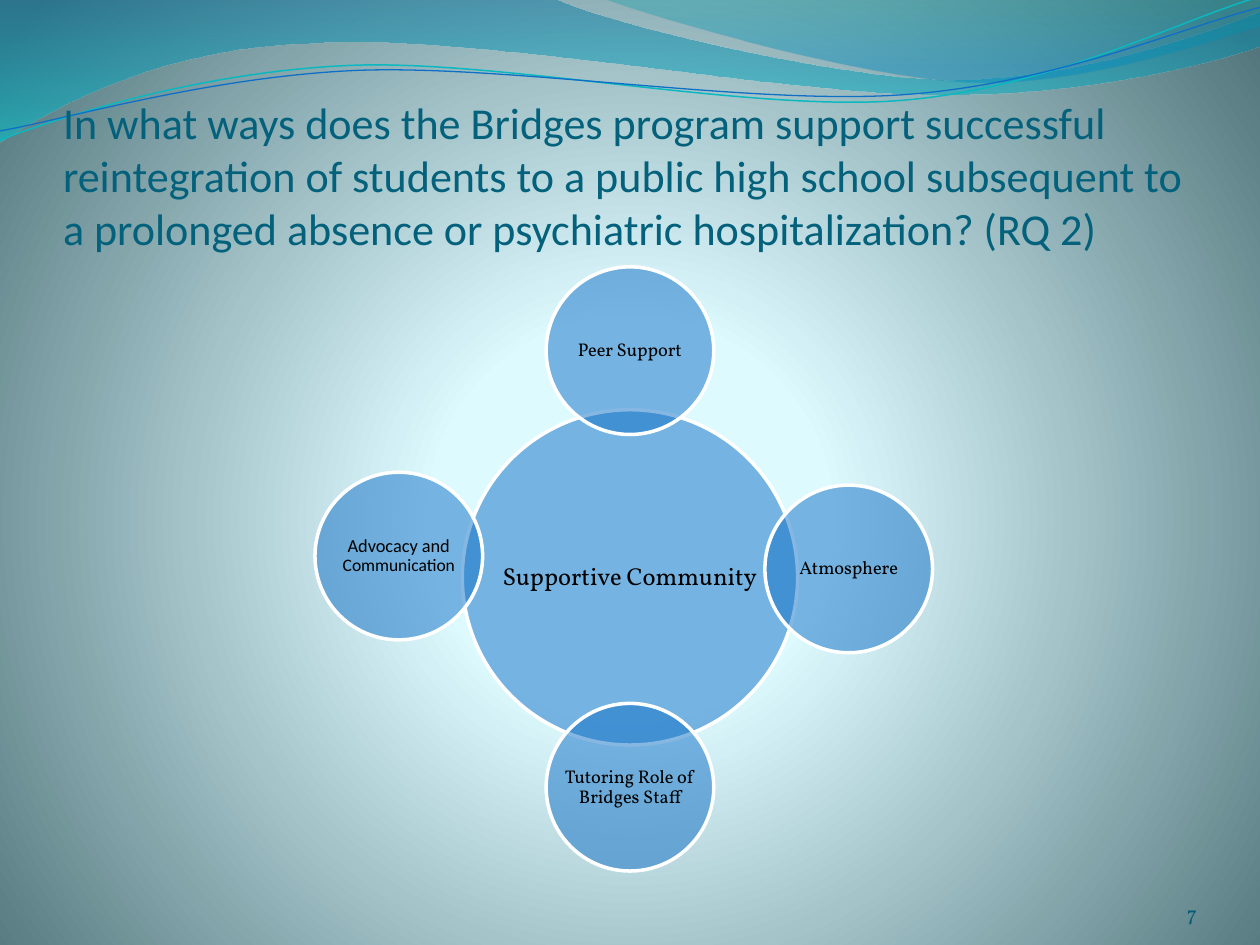
from lxml.etree import Element, SubElement
from pptx import Presentation
from pptx.dml.color import RGBColor
from pptx.enum.shapes import MSO_SHAPE
from pptx.enum.text import MSO_ANCHOR, PP_ALIGN
from pptx.oxml.ns import qn
from pptx.util import Cm, Pt

BLUE = RGBColor(0x0F, 0x6F, 0xC6)
TEAL = RGBColor(0x0A, 0xB8, 0xBF)
TITLE = RGBColor(0x04, 0x61, 0x7B)
NUMBER = RGBColor(0x04, 0x5D, 0x75)
WHITE = RGBColor(0xFF, 0xFF, 0xFF)
BLACK = RGBColor(0, 0, 0)
BG_STOPS = [(0, RGBColor(0xDE, 0xFB, 0xFF), 100),
            (25, RGBColor(0xDD, 0xFA, 0xFF), 100),
            (100, RGBColor(0x52, 0x76, 0x7C), 100)]
WIDE_STOPS = [(0, RGBColor(0x00, 0x74, 0xA1), 45),
              (100, RGBColor(0x00, 0xC6, 0xCF), 55)]
CORNER_STOPS = [(0, RGBColor(0x00, 0xA1, 0xA9), 30),
                (80, RGBColor(0x00, 0x8B, 0xBF), 45)]

# Outlines in cm: a pair is a straight step, six numbers are a Bezier step
WIDE_WAVE = [(0, 0), (11.18, -0.03), (12.09, 0.43, 16.87, 1.6, 19.25, 1.6),
             (21.67, 1.6, 24.33, 0.66, 25.4, 0.23), (25.43, 0.91),
             (24.97, 1.12, 22.1, 1.93, 18.95, 1.91),
             (15.8, 1.91, 9.7, 0.71, 6.53, 0.86),
             (3.28, 0.91, 1.17, 2.11, -0.03, 2.87), (0, 0)]
CORNER_WAVE = [(12.17, -0.03), (12.93, 0.28, 17.32, 1.57, 19.53, 1.65),
               (21.74, 1.75, 24.41, 0.81, 25.4, 0.53), (25.4, 0),
               (12.17, -0.03)]
TEAL_CURVE = [(0, 2.82), (1.22, 2.36, 4.01, 1.45, 7.04, 1.32),
              (10.03, 1.19, 15.06, 2.26, 18.11, 2.03),
              (21.16, 1.8, 23.83, 0.38, 25.35, -0.05)]
BLUE_CURVE = [(0, 2.64), (1.19, 2.44, 4.17, 1.55, 7.19, 1.42),
              (10.24, 1.3, 15.16, 2.13, 18.21, 1.91),
              (21.23, 1.7, 23.9, 0.53, 25.4, 0.15)]

HUB_SIZE, SATELLITE_SIZE = 6.76, 3.38
SATELLITES = [(12.7, 7.07, ["Peer Support"], {}),
              (17.11, 11.47, ["Atmosphere"], {}),
              (12.7, 15.87, ["Tutoring Role of Bridges Staff"], {}),
              (8.04, 11.21, ["Advocacy and ", "Communication"],
               {"font": "Calibri", "sizes": (10.5, 10)})]


def set_alpha(color, percent):
    SubElement(color, qn("a:alpha"), val=str(percent * 1000))


def set_gradient(fill, parent, stops, radial=False):
    """Give a fill its own colour stops, downward or from the middle."""
    fill.gradient()
    grad = parent.find(qn("a:gradFill"))
    for child in list(grad):
        grad.remove(child)
    gs_lst = SubElement(grad, qn("a:gsLst"))
    for pos, color, alpha in stops:
        gs = SubElement(gs_lst, qn("a:gs"), pos=str(pos * 1000))
        clr = SubElement(gs, qn("a:srgbClr"), val=str(color))
        if alpha < 100:
            set_alpha(clr, alpha)
    if radial:
        way = SubElement(grad, qn("a:path"), path="circle")
        SubElement(way, qn("a:fillToRect"), l="10000", t="110000",
                   r="10000", b="100000")
    else:
        SubElement(grad, qn("a:lin"), ang="5400000", scaled="0")


def add_outline(s, steps, close):
    """Build a freeform through the step ends, then bend its Bezier steps."""
    ends = [(Cm(step[-2]), Cm(step[-1])) for step in steps]
    builder = s.shapes.build_freeform(*ends[0])
    builder.add_line_segments(ends[1:], close=close)
    sp = builder.convert_to_shape()
    sp.shadow.inherit = False
    segments = list(sp._element.spPr.iter(qn("a:lnTo")))
    for segment, step in zip(segments, steps[1:]):
        if len(step) == 6:
            segment.tag = qn("a:cubicBezTo")
            for i in (0, 1):
                x, y = step[2 * i:2 * i + 2]
                segment.insert(i, Element(qn("a:pt"), x=str(Cm(x) - sp.left),
                                          y=str(Cm(y) - sp.top)))
    return sp


def add_wave(s, steps, stops):
    sp = add_outline(s, steps, close=True)
    sp.line.fill.background()
    set_gradient(sp.fill, sp._element.spPr, stops)


def add_curve(s, steps, color, width):
    sp = add_outline(s, steps, close=False)
    sp.fill.background()
    sp.line.color.rgb = color
    sp.line.width = Pt(width)


def write_text(tf, *texts, font="Vollkorn", sizes=(10.5,), color=BLACK,
               align=PP_ALIGN.CENTER, anchor=MSO_ANCHOR.MIDDLE,
               spacing=None, insets=(0, 0, 0, 0)):
    """Write one paragraph with a run per text; sizes go with the runs."""
    tf.word_wrap = True
    tf.vertical_anchor = anchor
    (tf.margin_left, tf.margin_top,
     tf.margin_right, tf.margin_bottom) = [Cm(v) for v in insets]
    p = tf.paragraphs[0]
    p.alignment = align
    p.line_spacing = spacing
    for text, size in zip(texts, sizes):
        r = p.add_run()
        r.text = text
        r.font.name = font
        r.font.size = Pt(size)
        r.font.color.rgb = color


def add_circle(s, cx, cy, size, texts, **fmt):
    """Translucent circle with a label across its full width."""
    box = Cm(cx - size / 2), Cm(cy - size / 2), Cm(size), Cm(size)
    sp = s.shapes.add_shape(MSO_SHAPE.OVAL, *box)
    sp.shadow.inherit = False
    sp.fill.solid()
    sp.fill.fore_color.rgb = BLUE
    set_alpha(sp._element.spPr.find(qn("a:solidFill"))[0], 50)
    sp.line.color.rgb = WHITE
    sp.line.width = Pt(2)
    label = s.shapes.add_textbox(*box)
    write_text(label.text_frame, *texts, spacing=0.9, insets=(0.05,) * 4, **fmt)


def add_title(s, text):
    title = s.shapes.title
    title.left, title.top, title.width, title.height = (
        Cm(1.27), Cm(1.94), Cm(22.86), Cm(3.18))
    write_text(title.text_frame, text, font="Calibri", sizes=(25.2,),
               color=TITLE, align=PP_ALIGN.LEFT, anchor=MSO_ANCHOR.BOTTOM,
               insets=(0, 0.13, 0, 0))
    s.shapes._spTree.append(title._element)  # in front of the waves


def main():
    prs = Presentation()
    prs.slide_width, prs.slide_height = Cm(25.4), Cm(19.05)
    s = prs.slides.add_slide(prs.slide_layouts[5])

    # Background and waves
    fill = s.background.fill
    set_gradient(fill, s._element.cSld.bg.bgPr, BG_STOPS, radial=True)
    add_wave(s, WIDE_WAVE, WIDE_STOPS)
    add_wave(s, CORNER_WAVE, CORNER_STOPS)
    add_curve(s, TEAL_CURVE, TEAL, 0.85)
    add_curve(s, BLUE_CURVE, BLUE, 0.75)

    add_title(s, "In what ways does the Bridges program support successful "
                 "reintegration of students to a public high school subsequent "
                 "to a prolonged absence or psychiatric hospitalization? (RQ 2)")

    # Hub and the circles around it
    add_circle(s, 12.7, 11.64, HUB_SIZE, ["Supportive Community"], sizes=(14,))
    for cx, cy, texts, fmt in SATELLITES:
        add_circle(s, cx, cy, SATELLITE_SIZE, texts, **fmt)

    # Slide number
    number = s.shapes.add_textbox(Cm(22.02), Cm(17.65), Cm(2.11), Cm(1.02))
    write_text(number.text_frame, "7", sizes=(12,), color=NUMBER,
               align=PP_ALIGN.RIGHT, anchor=MSO_ANCHOR.BOTTOM)
    prs.save("out.pptx")


if __name__ == "__main__":
    main()
